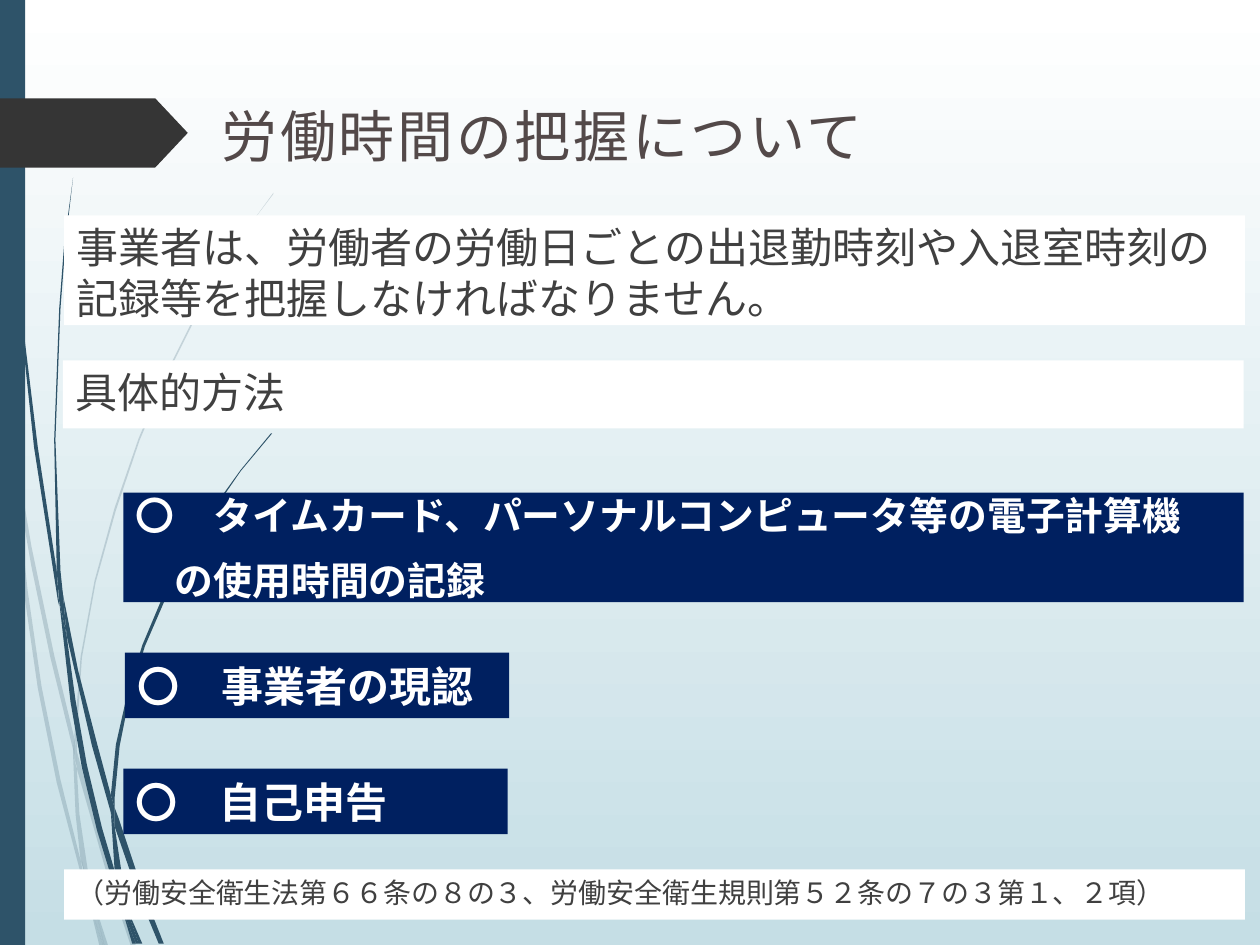
from lxml.etree import SubElement
from pptx import Presentation
from pptx.dml.color import RGBColor
from pptx.enum.shapes import MSO_SHAPE
from pptx.enum.text import MSO_ANCHOR, PP_ALIGN
from pptx.oxml.ns import qn
from pptx.util import Inches, Pt

COLORS = {"teal": "2E5369", "charcoal": "353535", "navy": "002060", "white": "FFFFFF",
          "mist": "C5DEE5", "title": "534949", "body": "404040"}

TITLE = "労働時間の把握について"
# (left, top, width, height), paragraphs, size
NOTES = [
    ((0.51, 6.9, 9.37, 0.4),
     ["（労働安全衛生法第６６条の８の３、労働安全衛生規則第５２条の７の３第１、２項）"], 16),
    ((0.51, 1.71, 9.37, 0.87),
     ["事業者は、労働者の労働日ごとの出退勤時刻や入退室時刻の記録等を把握しなければなりません。"], 24),
    ((0.5, 2.86, 9.37, 0.54), ["具体的方法"], 24),
]
METHODS = [
    ((0.98, 3.91, 8.89, 0.87),
     ["〇　タイムカード、パーソナルコンピュータ等の電子計算機", "　の使用時間の記録"], 22.2),
    ((0.99, 5.18, 3.05, 0.52), ["〇　事業者の現認"], 24),
    ((0.98, 6.1, 3.05, 0.52), ["〇　自己申告"], 24),
]

# Outlines of the grass blades, section by section
FAINT_GRASS = [
    [(0.08, 3.5), (0.06, 3.22), (0, 2.82), (0, 2.99), (0.07, 3.44)],
    [(0.4, 5.22), (0.59, 5.99), (0.59, 5.86), (0.43, 5.2), (0.25, 4.34), (0.1, 3.45),
     (0.12, 3.76), (0.25, 4.5)],
    [(0.64, 6.07), (0.61, 5.96), (0.61, 6.1), (0.85, 6.94), (1.04, 7.51), (1.08, 7.51),
     (0.88, 6.92)],
    [(0.83, 7.51), (0.86, 7.51), (0.73, 7.11)],
    [(0.64, 6.83), (0.48, 6.19), (0.33, 5.45), (0.22, 4.69), (0.12, 3.76), (0.08, 3.5),
     (0.19, 4.7), (0.3, 5.46), (0.45, 6.21), (0.64, 6.93), (0.7, 7.14), (0.69, 7.07)],
    [(0.58, 5.99), (0.6, 6.46), (0.64, 6.83), (0.67, 6.92), (0.73, 7.11), (0.72, 7.06),
     (0.63, 6.46), (0.61, 6.1)],
    [(0.61, 5.84), (0.65, 5.22), (0.76, 4.62), (0.92, 4.05), (1.11, 3.49), (1.34, 2.95),
     (1.59, 2.45), (1.87, 1.98), (2.01, 1.75), (2.17, 1.54), (2.17, 1.53), (2.01, 1.75),
     (1.86, 1.97), (1.58, 2.44), (1.33, 2.94), (1.1, 3.48), (0.91, 4.03), (0.75, 4.61),
     (0.64, 5.21), (0.59, 5.84), (0.61, 5.96)],
    [(0.7, 7.14), (0.79, 7.51), (0.82, 7.51)],
    [(0.61, 6.08), (0.61, 6.1), (0.61, 5.96), (0.59, 5.86), (0.58, 5.99)],
    [(0.67, 6.92), (0.65, 6.83), (0.69, 7.07), (0.7, 7.14), (0.82, 7.51), (0.83, 7.51),
     (0.73, 7.11)],
]
DARK_GRASS = [
    [(0.05, 1.1), (0.14, 2.33), (0.27, 3.55), (0.46, 4.77), (0.47, 4.81), (0.45, 4.53),
     (0.3, 3.55), (0.15, 2.32), (0.06, 1.09), (0.04, 0.48), (0.03, 0), (0.02, 0), (0.03, 0.48)],
    [(0.73, 5.92), (0.88, 6.45), (0.88, 6.31), (0.77, 5.9), (0.62, 5.32), (0.5, 4.72),
     (0.53, 5.05)],
    [(0.94, 6.49), (0.91, 6.41), (0.91, 6.56), (1.09, 7.08), (1.26, 7.49), (1.3, 7.49),
     (1.13, 7.06)],
    [(0.91, 6.91), (0.81, 6.57), (0.69, 6.07), (0.6, 5.56), (0.53, 5.05), (0.47, 4.77),
     (0.56, 5.57), (0.65, 6.09), (0.77, 6.59), (0.92, 7.08), (0.97, 7.22), (0.96, 7.17)],
    [(0.5, 4.72), (0.48, 4.53), (0.44, 3.49), (0.48, 2.45), (0.52, 1.93), (0.58, 1.41),
     (0.51, 1.93), (0.47, 2.45), (0.43, 3.49), (0.45, 4.49), (0.49, 4.72)],
    [(1.1, 7.49), (1.13, 7.49), (1, 7.19)],
    [(0.47, 4.77), (0.53, 5.05), (0.5, 4.72), (0.45, 4.49), (0.45, 4.53)],
    [(0.91, 6.33), (0.95, 5.92), (1.03, 5.52), (1.15, 5.13), (1.31, 4.76), (1.49, 4.4),
     (1.69, 4.06), (1.91, 3.74), (2.16, 3.44), (2.15, 3.44), (1.91, 3.73), (1.68, 4.05),
     (1.47, 4.39), (1.29, 4.74), (1.13, 5.12), (1.01, 5.51), (0.92, 5.91), (0.88, 6.31),
     (0.91, 6.41)],
    [(0.97, 7.22), (1.05, 7.49), (1.08, 7.49)],
    [(0.88, 6.45), (0.91, 6.91), (0.96, 7.06), (1, 7.19), (1, 7.16), (0.91, 6.56)],
    [(0.88, 6.45), (0.91, 6.56), (0.91, 6.41), (0.88, 6.31)],
    [(0.96, 7.06), (0.91, 6.91), (0.96, 7.17), (0.97, 7.22), (1.08, 7.49), (1.1, 7.49),
     (1, 7.19)],
]


def rgb(name):
    return RGBColor.from_string(COLORS[name])


def paint(shape, color, alpha=None):
    shape.shadow.inherit = False
    shape.fill.solid()
    shape.fill.fore_color.rgb = rgb(color)
    shape.line.fill.background()
    if alpha is not None:
        tint = shape.fill._xPr.find(".//" + qn("a:srgbClr"))
        SubElement(tint, qn("a:alpha"), val=str(alpha * 1000))


def add_grass(slide, outline, alpha=None):
    start, *rest = [(Inches(x), Inches(y)) for x, y in outline]
    builder = slide.shapes.build_freeform(*start)
    builder.add_line_segments(rest, close=True)
    paint(builder.convert_to_shape(), "teal", alpha)


def add_block(slide, kind, box, color):
    block = slide.shapes.add_shape(kind, *map(Inches, box))
    paint(block, color)
    return block


def write(shape, paragraphs, size, color, font="Quicksand", bold=False,
          anchor=MSO_ANCHOR.TOP, before=10, spacing=None, indent=None):
    frame = shape.text_frame
    frame.word_wrap = True
    frame.vertical_anchor = anchor
    for index, text in enumerate(paragraphs):
        paragraph = frame.add_paragraph() if index else frame.paragraphs[0]
        paragraph.alignment = PP_ALIGN.LEFT
        paragraph.space_before = Pt(before)
        if indent:
            paragraph._p.get_or_add_pPr().set("marL", str(Inches(indent)))
        run = paragraph.add_run()
        run.text = text
        run.font.name = font
        run.font.size = Pt(size)
        run.font.bold = bold
        run.font.color.rgb = rgb(color)
        if spacing:
            run.font._element.set("spc", str(int(spacing * 100)))


def main():
    deck = Presentation()
    deck.slide_width, deck.slide_height = Inches(10), Inches(7.5)
    slide = deck.slides.add_slide(deck.slide_layouts[6])

    backdrop = slide.background.fill
    backdrop.gradient()
    backdrop.gradient_angle = 270
    for stop, color in zip(backdrop.gradient_stops, ("white", "mist")):
        stop.color.rgb = rgb(color)

    for outline in FAINT_GRASS:
        add_grass(slide, outline, alpha=20)
    for outline in DARK_GRASS:
        add_grass(slide, outline)

    add_block(slide, MSO_SHAPE.RECTANGLE, (0, 0, 0.2, 7.5), "teal")
    marker = add_block(slide, MSO_SHAPE.PENTAGON, (0, 0.78, 1.49, 0.55), "charcoal")
    marker.adjustments[0] = 0.47

    heading = slide.shapes.add_textbox(*map(Inches, (1.61, 0.76, 7.23, 0.64)))
    write(heading, [TITLE], 32, "title", font="Roboto", before=0, spacing=1.5, indent=0.05)

    for box, paragraphs, size in NOTES:
        note = add_block(slide, MSO_SHAPE.RECTANGLE, box, "white")
        write(note, paragraphs, size, "body")
    for box, paragraphs, size in METHODS:
        method = add_block(slide, MSO_SHAPE.RECTANGLE, box, "navy")
        write(method, paragraphs, size, "white", bold=True, anchor=MSO_ANCHOR.MIDDLE)

    deck.save("out.pptx")


if __name__ == "__main__":
    main()
